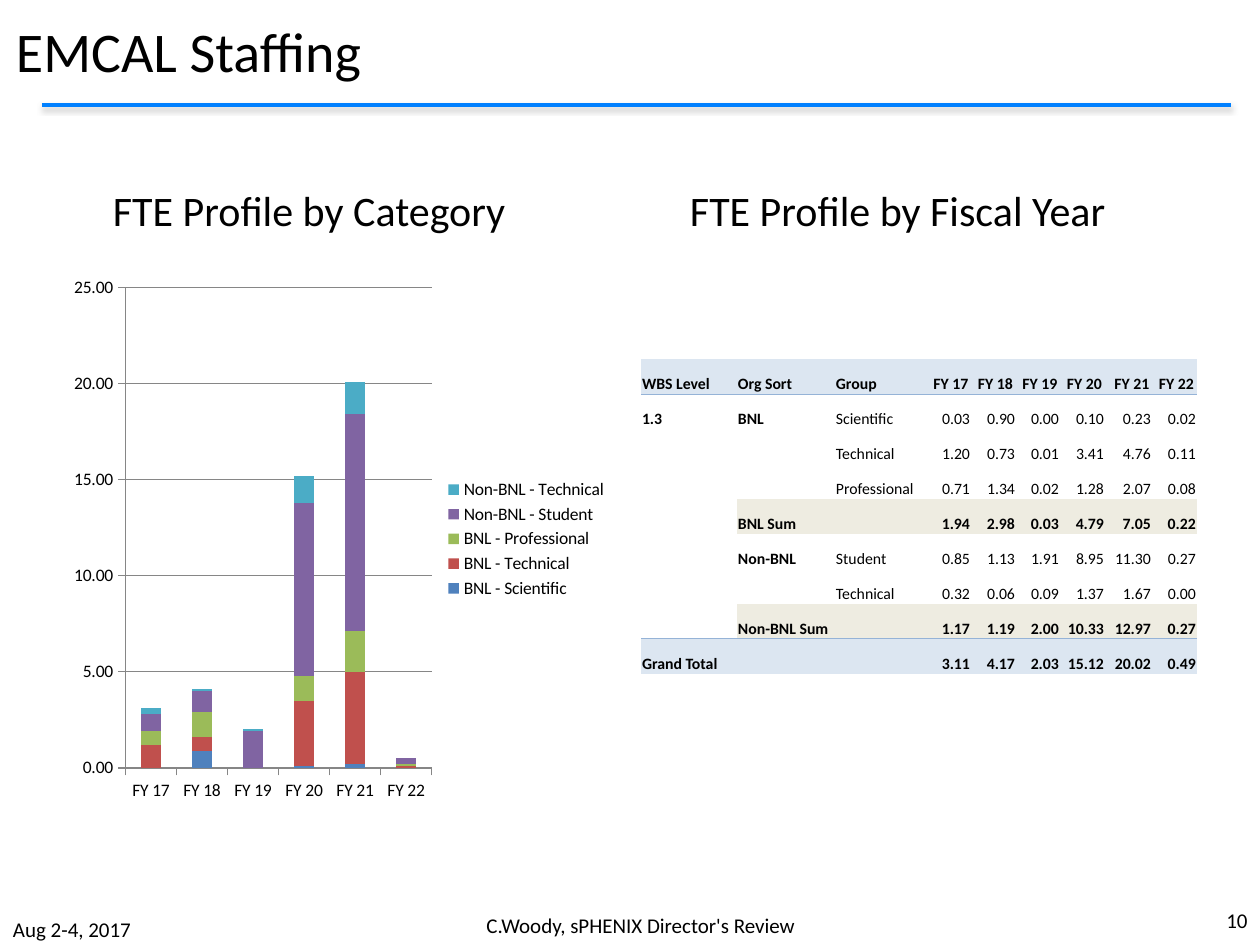
import math

from lxml import etree
from pptx import Presentation
from pptx import util as u
from pptx.chart import data as chart_data
from pptx.dml import color
from pptx.enum import chart as ce, shapes, text
from pptx.oxml import ns

SCALE = 914400 / 126  # EMU per px
FONT = "Calibri"
COLORS = {
    "text": "000000", "rule": "0080FF", "shadow": "808080", "axis": "868686",
    "band": "DCE6F1", "sum": "EEECE1", "border": "95B3D7",
}
SERIES_COLORS = ["4F81BD", "C0504D", "9BBB59", "8064A2", "4BACC6"]
LEFT, CENTER, RIGHT = text.PP_ALIGN.LEFT, text.PP_ALIGN.CENTER, text.PP_ALIGN.RIGHT
MIDDLE, TOP, BOTTOM = text.MSO_ANCHOR.MIDDLE, text.MSO_ANCHOR.TOP, text.MSO_ANCHOR.BOTTOM


def px(value):
    return u.Emu(round(value * SCALE))


def add_run(paragraph, words, size, bold=False):
    run = paragraph.add_run()
    run.text = words
    run.font.name = FONT
    run.font.size = u.Pt(size)
    run.font.bold = bold
    run.font.color.rgb = color.RGBColor.from_string(COLORS["text"])


presentation = Presentation()
presentation.slide_width, presentation.slide_height = px(1260), px(945)
slide = presentation.slides.add_slide(presentation.slide_layouts[6])

# Rule under the title, with a soft shadow
rule = slide.shapes.add_connector(shapes.MSO_CONNECTOR.STRAIGHT, px(42), px(105), px(1231), px(105))
rule.line.color.rgb = color.RGBColor.from_string(COLORS["rule"])
rule.line.width = u.Pt(2.25)
effects = etree.SubElement(rule._element.spPr, ns.qn("a:effectLst"))
shadow = etree.SubElement(effects, ns.qn("a:outerShdw"), blurRad=str(u.Pt(3.1)),
                          dist=str(u.Pt(1.6)), dir="5400000", rotWithShape="0")
shadow_color = etree.SubElement(shadow, ns.qn("a:srgbClr"), val=COLORS["shadow"])
etree.SubElement(shadow_color, ns.qn("a:alpha"), val="38000")

# Title, footer and headings: words, box, size, alignment, anchor, left inset
for words, box, size, align, anchor, inset in [
    ("EMCAL Staffing", (3, 0, 1134, 101), 32, LEFT, MIDDLE, 13),
    ("Aug 2-4, 2017", (0, 914, 294, 31), 12, LEFT, MIDDLE, 13),
    ("C.Woody, sPHENIX Director's Review", (441, 905, 399, 40), 12, CENTER, MIDDLE, 13),
    ("10", (1187, 895, 73, 50), 12, RIGHT, MIDDLE, 13),
    ("FTE Profile by Category", (63, 178, 557, 88), 24, LEFT, TOP, 50),
    ("FTE Profile by Fiscal Year", (640, 178, 557, 88), 24, LEFT, TOP, 50),
]:
    frame = slide.shapes.add_textbox(*map(px, box)).text_frame
    frame.word_wrap = True
    frame.vertical_anchor = anchor
    frame.margin_left = px(inset)
    frame.paragraphs[0].alignment = align
    add_run(frame.paragraphs[0], words, size)

# Staffing figures, shared by the table and the chart
YEARS = ["FY 17", "FY 18", "FY 19", "FY 20", "FY 21", "FY 22"]
BLANK = [""] * 9
rows = [
    BLANK,
    ["WBS Level", "Org Sort", "Group", *YEARS],
    ["1.3", "BNL", "Scientific", 0.03, 0.90, 0.00, 0.10, 0.23, 0.02],
    ["", "", "Technical", 1.20, 0.73, 0.01, 3.41, 4.76, 0.11],
    ["", "", "Professional", 0.71, 1.34, 0.02, 1.28, 2.07, 0.08],
    ["", "BNL Sum", "", 1.94, 2.98, 0.03, 4.79, 7.05, 0.22],
    ["", "Non-BNL", "Student", 0.85, 1.13, 1.91, 8.95, 11.30, 0.27],
    ["", "", "Technical", 0.32, 0.06, 0.09, 1.37, 1.67, 0.00],
    ["", "Non-BNL Sum", "", 1.17, 1.19, 2.00, 10.33, 12.97, 0.27],
    ["Grand Total", "", "", 3.11, 4.17, 2.03, 15.12, 20.02, 0.49],
    BLANK,
    BLANK,
]
HEADER, TOTAL, SUMS = 1, 9, (5, 8)

# Table
widths = [96, 98, 89, 47, 45, 44, 45, 47, 45]
table = slide.shapes.add_table(len(rows), len(widths), px(641), px(324),
                               px(sum(widths)), px(35 * len(rows))).table
table.first_row = table.horz_banding = False
table._tbl.tblPr[0].text = "{2D5ABB26-0587-4C30-8999-92F81FD0307C}"  # no style, no grid
for column, width in zip(table.columns, widths):
    column.width = px(width)
for i, row in enumerate(rows):
    table.rows[i].height = px(35)
    for j, value in enumerate(row):
        cell = table.cell(i, j)
        cell.vertical_anchor = BOTTOM
        cell.margin_left = cell.margin_right = cell.margin_top = px(1)
        cell.margin_bottom = 0
        paragraph = cell.text_frame.paragraphs[0]
        if value == "":
            etree.SubElement(paragraph._p, ns.qn("a:endParaRPr"), sz="900")
        else:
            words = value if isinstance(value, str) else f"{value:.2f}"
            bold = i in (HEADER, TOTAL, *SUMS) or j < 2
            add_run(paragraph, words, 9, bold)
        if j > 2:
            paragraph.alignment = CENTER if i == HEADER else RIGHT
            if i == HEADER:
                cell.margin_left = px(8 if value in ("FY 17", "FY 21") else 5)
        if i in (HEADER, TOTAL - 1):
            border = etree.SubElement(cell._tc.get_or_add_tcPr(), ns.qn("a:lnB"), w=str(u.Pt(0.5)))
            border_fill = etree.SubElement(border, ns.qn("a:solidFill"))
            etree.SubElement(border_fill, ns.qn("a:srgbClr"), val=COLORS["border"])
        band = "band" if i in (HEADER, TOTAL) else "sum" if i in SUMS and j > 0 else None
        if band:
            cell.fill.solid()
            cell.fill.fore_color.rgb = color.RGBColor.from_string(COLORS[band])
        else:
            cell.fill.background()

# Stacked column chart of the detail rows, rounded half up to one decimal
data = chart_data.CategoryChartData(number_format="#,##0.00")
data.categories = YEARS
for row in rows[HEADER + 1:TOTAL]:
    organisation = row[1] if row[1] in ("BNL", "Non-BNL") else organisation
    if row[2]:
        staffing = [math.floor(value * 10 + 0.5) / 10 for value in row[3:]]
        data.add_series(f"{organisation} - {row[2]}", staffing)
chart = slide.shapes.add_chart(ce.XL_CHART_TYPE.COLUMN_STACKED, px(63), px(267),
                               px(557), px(544), data).chart
chart.font.name = FONT
chart.font.size = u.Pt(10)
chart.font.color.rgb = color.RGBColor.from_string(COLORS["text"])
chart.has_title = False
chart.has_legend = True
chart.legend.position = ce.XL_LEGEND_POSITION.RIGHT
chart.legend.include_in_layout = False
plot = chart.plots[0]
plot.gap_width, plot.overlap, plot.vary_by_categories = 150, 100, False
for series, fill in zip(plot.series, SERIES_COLORS):
    series.format.fill.solid()
    series.format.fill.fore_color.rgb = color.RGBColor.from_string(fill)
values = chart.value_axis
values.minimum_scale, values.maximum_scale, values.major_unit = 0, 25, 5
values.tick_labels.number_format = "#,##0.00"
values.tick_labels.number_format_is_linked = False
values.has_major_gridlines = True
for axis in (chart.category_axis, values):
    axis.major_tick_mark = ce.XL_TICK_MARK.OUTSIDE
for part in (chart.category_axis, values, values.major_gridlines):
    part.format.line.color.rgb = color.RGBColor.from_string(COLORS["axis"])
    part.format.line.width = u.Pt(0.75)

presentation.save("out.pptx")
